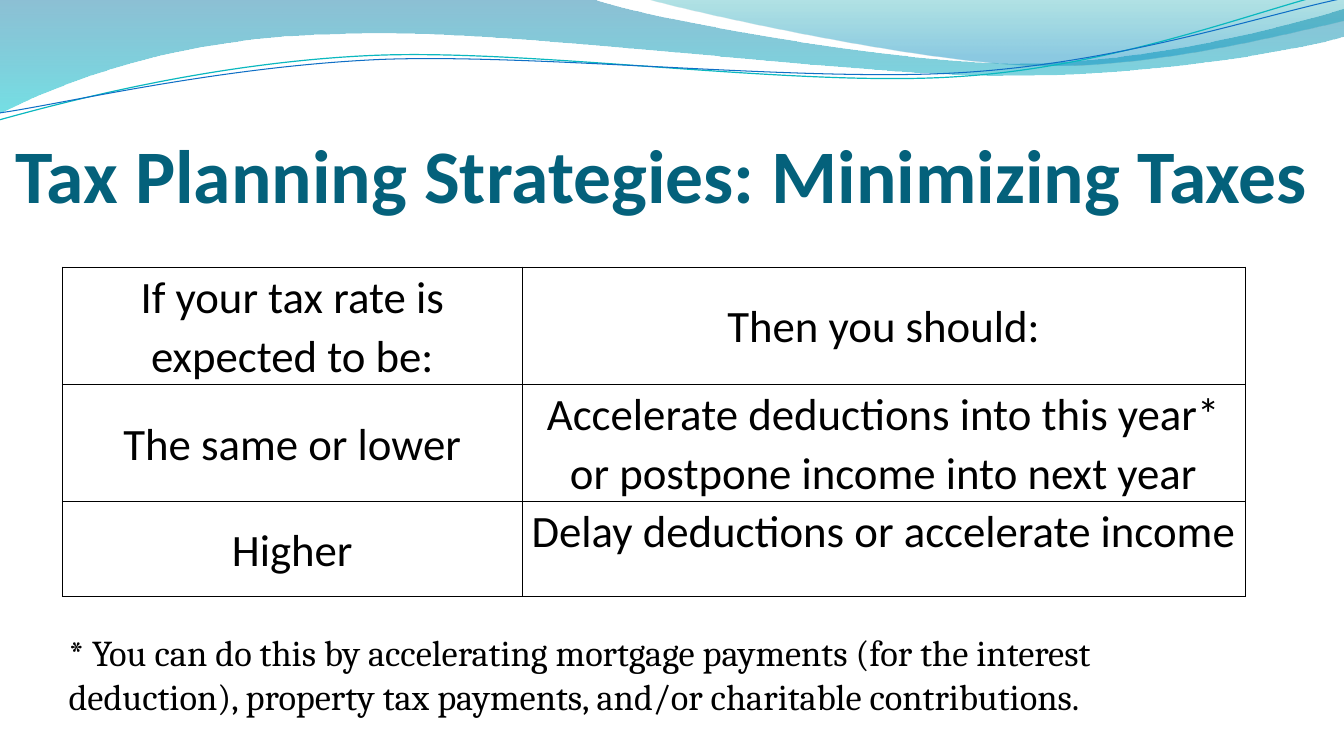
from pptx import Presentation
from pptx.dml.color import RGBColor
from pptx.enum.text import MSO_ANCHOR, MSO_AUTO_SIZE, PP_ALIGN
from pptx.oxml.ns import qn
from pptx.util import Inches, Pt
from lxml.etree import SubElement

TITLE = "Tax Planning Strategies: Minimizing Taxes"
NOTE = ("* You can do this by accelerating mortgage payments (for the interest "
        "deduction), property tax payments, and/or charitable contributions.")
ROWS = [
    ("If your tax rate is expected to be:", "Then you should:"),
    ("The same or lower",
     "Accelerate deductions into this year* or postpone income into next year"),
    ("Higher", "Delay deductions or accelerate income"),
]
WIDTHS = [4.56, 7.17]
HEIGHTS = [0.48, 0.48, 0.94]
TOP_CELLS = [(1, 1), (2, 1)]
COLORS = {"title": "04617B", "text": "000000", "blue": "0074A1", "cyan": "00C6CF",
          "teal": "00A1A9", "sky": "008BBF", "aqua": "0AB8BF", "navy": "0F6FC6"}

BANDS = [
    ([(0, 0), (5.87, -0.01), (6.34, 0.17, 8.85, 0.63, 10.11, 0.63),
      (11.38, 0.63, 12.78, 0.26, 13.33, 0.09), (13.35, 0.36),
      (13.11, 0.44, 11.6, 0.76, 9.94, 0.75), (8.29, 0.75, 5.09, 0.28, 3.43, 0.34),
      (1.72, 0.36, 0.61, 0.83, -0.01, 1.13)],
     [(0, "blue", 45), (1, "cyan", 55)]),
    ([(6.39, -0.01), (6.79, 0.11, 9.09, 0.62, 10.25, 0.65),
      (11.41, 0.69, 12.82, 0.32, 13.33, 0.21), (13.33, 0)],
     [(0, "teal", 30), (0.8, "sky", 45)]),
]
WAVES = [
    ([(-0.01, 1.19), (0.64, 1.01, 2.11, 0.62, 3.69, 0.55),
      (5.27, 0.48, 7.9, 0.87, 9.5, 0.76), (11.1, 0.66, 12.52, 0.08, 13.31, -0.1)],
     "aqua", 0.85),
    ([(0, 1.12), (0.63, 1.03, 2.18, 0.66, 3.78, 0.59),
      (5.37, 0.53, 7.96, 0.82, 9.55, 0.72), (11.15, 0.62, 12.55, 0.14, 13.34, -0.02)],
     "navy", 0.75),
]


def color(name):
    return RGBColor.from_string(COLORS[name])


def draw(slide, steps, close, depth):
    points = [(Inches(x), Inches(y))
              for step in steps for x, y in zip(step[::2], step[1::2])]
    pen = slide.shapes.build_freeform(*points[0])
    pen.add_line_segments(points[1:], close=close)
    shape = pen.convert_to_shape()
    shape.shadow.inherit = False
    legs = iter(list(shape._element.spPr.iter(qn("a:lnTo"))))
    for step in steps[1:]:
        leg = next(legs)
        if len(step) == 6:
            leg.tag = qn("a:cubicBezTo")
            for extra in (next(legs), next(legs)):
                leg.append(extra[0])
                extra.getparent().remove(extra)
    slide.shapes._spTree.insert(2 + depth, shape._element)
    return shape


def add_band(slide, steps, stops, depth):
    shape = draw(slide, steps, True, depth)
    shape.line.fill.background()
    shape.fill.gradient()
    shape.fill.gradient_angle = 270
    for stop, (place, name, alpha) in zip(shape.fill.gradient_stops, stops):
        stop.position = place
        stop.color.rgb = color(name)
    tones = shape._element.spPr.iter(qn("a:srgbClr"))
    for tone, (place, name, alpha) in zip(list(tones), stops):
        SubElement(tone, qn("a:alpha"), val=str(alpha * 1000))


def add_wave(slide, steps, name, width, depth):
    shape = draw(slide, steps, False, depth)
    shape.fill.background()
    shape.line.color.rgb = color(name)
    shape.line.width = Pt(width)


def write(para, text, size, face, name, bold=False):
    run = para.add_run()
    run.text = text
    run.font.size = Pt(size)
    run.font.name = face
    run.font.bold = bold
    run.font.color.rgb = color(name)


def place(shape, left, top, width, height, anchor):
    shape.left, shape.top = Inches(left), Inches(top)
    shape.width, shape.height = Inches(width), Inches(height)
    frame = shape.text_frame
    frame.word_wrap = True
    frame.auto_size = MSO_AUTO_SIZE.NONE
    frame.vertical_anchor = anchor
    frame.paragraphs[0].alignment = PP_ALIGN.LEFT
    return frame


def add_rates(slide):
    holder = slide.shapes.add_table(
        len(ROWS), len(WIDTHS), Inches(0.62), Inches(2.65),
        Inches(sum(WIDTHS)), Inches(sum(HEIGHTS)))
    table = holder.table
    table.first_row = table.horz_banding = False
    for col, width in zip(table.columns, WIDTHS):
        col.width = Inches(width)
    for r, (row, height) in enumerate(zip(ROWS, HEIGHTS)):
        table.rows[r].height = Inches(height)
        for c, text in enumerate(row):
            cell = table.cell(r, c)
            cell.margin_left = cell.margin_right = Inches(0.07)
            cell.margin_top = cell.margin_bottom = 0
            top = (r, c) in TOP_CELLS
            cell.vertical_anchor = MSO_ANCHOR.TOP if top else MSO_ANCHOR.MIDDLE
            para = cell.text_frame.paragraphs[0]
            para.alignment = PP_ALIGN.CENTER
            para.line_spacing = 1.07
            write(para, text, 32, "Calibri", "text")
            props = cell._tc.get_or_add_tcPr()
            for side in ("lnL", "lnR", "lnT", "lnB"):
                edge = SubElement(props, qn("a:" + side), w=str(Pt(1)))
                fill = SubElement(edge, qn("a:solidFill"))
                SubElement(fill, qn("a:srgbClr"), val=COLORS["text"])
            cell.fill.background()
    holder.height = Inches(3.23)


def main():
    deck = Presentation()
    deck.slide_width, deck.slide_height = Inches(13.33), Inches(7.5)
    slide = deck.slides.add_slide(deck.slide_layouts[1])

    frame = place(slide.shapes.title, 0.15, 0.4, 12.96, 1.77, MSO_ANCHOR.BOTTOM)
    frame.margin_left = frame.margin_right = frame.margin_bottom = 0
    write(frame.paragraphs[0], TITLE, 54, "Calibri", "title", True)

    frame = place(slide.placeholders[1], 0.58, 6.2, 11.88, 0.89, MSO_ANCHOR.TOP)
    para = frame.paragraphs[0]
    props = para._p.get_or_add_pPr()
    props.set("marL", "0")
    props.set("indent", "0")
    para.space_before = Pt(5.2)
    SubElement(props, qn("a:buNone"))
    write(para, NOTE, 26, "Cambria", "text")

    add_rates(slide)
    for depth, (steps, stops) in enumerate(BANDS):
        add_band(slide, steps, stops, depth)
    for depth, (steps, name, width) in enumerate(WAVES, len(BANDS)):
        add_wave(slide, steps, name, width, depth)
    deck.save("out.pptx")


if __name__ == "__main__":
    main()
